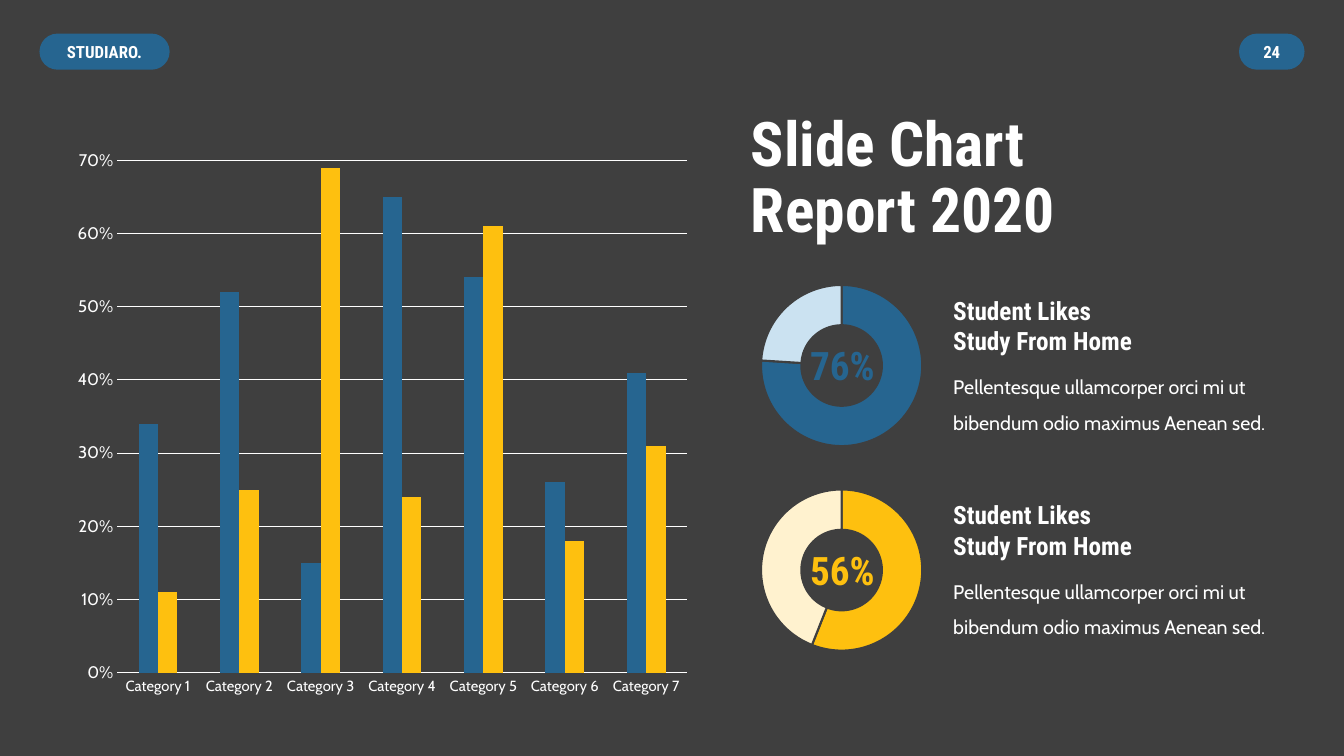
from dataclasses import dataclass

import pptx
import pptx.chart.data
import pptx.dml.color
import pptx.enum.chart
import pptx.enum.shapes
import pptx.enum.text
import pptx.oxml
import pptx.util

SLIDE_WIDTH, SLIDE_HEIGHT = 13.33, 7.5
COLUMNS, ROWS = 32, 18
DARK, WHITE, BLUE, YELLOW = "3F3F3F", "FFFFFF", "266590", "FEC00F"
HEADING_FONT, BODY_FONT = "Roboto Condensed", "Cabin"
ALIGN = pptx.enum.text.PP_ALIGN
ANCHOR = pptx.enum.text.MSO_ANCHOR
CHART_KIND = pptx.enum.chart.XL_CHART_TYPE
SURVEY_STEP = 4.87


@dataclass
class Box:
    column: float
    row: float
    width: float
    height: float

    def down(self, rows: float) -> "Box":
        return Box(self.column, self.row + rows, self.width, self.height)

    def place(self) -> tuple:
        across, down = SLIDE_WIDTH / COLUMNS, SLIDE_HEIGHT / ROWS
        return tuple(
            pptx.util.Inches(length)
            for length in (self.column * across, self.row * down,
                           self.width * across, self.height * down)
        )


@dataclass
class Badge:
    text: str
    box: Box


@dataclass
class Survey:
    percent: int
    color: str
    tint: str
    heading: str
    description: str


BADGES = [
    Badge("STUDIARO.", Box(0.94, 0.8, 3.1, 0.86)),
    Badge("24", Box(29.5, 0.8, 1.56, 0.86)),
]
HEADING = "Student Likes\nStudy From Home"
DESCRIPTION = "Pellentesque ullamcorper orci mi ut bibendum odio maximus Aenean sed."
SURVEYS = [
    Survey(76, BLUE, "CBE2F1", HEADING, DESCRIPTION),
    Survey(56, YELLOW, "FFF2CF", HEADING, DESCRIPTION),
]
CATEGORIES = [f"Category {number}" for number in range(1, 8)]
RESULTS = {
    "Series 1": ([0.34, 0.52, 0.15, 0.65, 0.54, 0.26, 0.41], BLUE),
    "Series 2": ([0.11, 0.25, 0.69, 0.24, 0.61, 0.18, 0.31], YELLOW),
}


def paint(target, color: str) -> None:
    target.solid()
    target.fore_color.rgb = pptx.dml.color.RGBColor.from_string(color)


def style_font(font, size: float, name: str, color: str, bold: bool = False) -> None:
    font.size, font.name, font.bold = pptx.util.Pt(size), name, bold
    paint(font.fill, color)


def style_line(line, color: str, width: float) -> None:
    paint(line.fill, color)
    line.width = pptx.util.Pt(width)


def write(frame, text: str, *, size: float, font: str = HEADING_FONT,
          color: str = WHITE, bold: bool = True, align=ALIGN.LEFT,
          anchor=ANCHOR.TOP, spacing: float = 1.0, wrap: bool = True) -> None:
    frame.text = text
    frame.word_wrap = wrap
    frame.auto_size = pptx.enum.text.MSO_AUTO_SIZE.NONE
    frame.vertical_anchor = anchor
    for paragraph in frame.paragraphs:
        paragraph.alignment = align
        paragraph.line_spacing = spacing
        for run in paragraph.runs:
            style_font(run.font, size, font, color, bold)


def add_text(slide, box: Box, text: str, **style) -> None:
    write(slide.shapes.add_textbox(*box.place()).text_frame, text, **style)


def add_badge(slide, badge: Badge) -> None:
    pill = slide.shapes.add_shape(
        pptx.enum.shapes.MSO_SHAPE.ROUNDED_RECTANGLE, *badge.box.place())
    pill.adjustments[0] = 0.5
    pill.shadow.inherit = False
    paint(pill.fill, BLUE)
    pill.line.fill.background()
    write(pill.text_frame, badge.text, size=12, align=ALIGN.CENTER, anchor=ANCHOR.MIDDLE)


def add_chart(slide, kind, box: Box, categories: list, results: dict):
    data = pptx.chart.data.CategoryChartData()
    data.categories = categories
    for name, values in results.items():
        data.add_series(name, values)
    chart = slide.shapes.add_chart(kind, *box.place(), data).chart
    chart.has_legend = chart.has_title = False
    style_font(chart.font, 10, BODY_FONT, WHITE)
    return chart


def fix_plot(chart, left: float, top: float, width: float, height: float) -> None:
    area = chart._chartSpace.chart.plotArea
    for layout in area.xpath("c:layout"):
        area.remove(layout)
    sizes = "".join(f'<c:{tag} val="{share}"/>' for tag, share in
                    zip("xywh", (left, top, width, height)))
    area.insert(0, pptx.oxml.parse_xml(
        '<c:layout xmlns:c="http://schemas.openxmlformats.org/drawingml/2006/chart">'
        '<c:manualLayout><c:layoutTarget val="inner"/>'
        f'<c:xMode val="edge"/><c:yMode val="edge"/>{sizes}'
        '</c:manualLayout></c:layout>'))


def add_results(slide) -> None:
    chart = add_chart(slide, CHART_KIND.COLUMN_CLUSTERED, Box(1.85, 2.18, 14.52, 14.42),
                      CATEGORIES, {name: values for name, (values, _) in RESULTS.items()})
    fix_plot(chart, 0.065, 0.053, 0.934, 0.907)
    plot = chart.plots[0]
    plot.gap_width, plot.overlap, plot.vary_by_categories = 219, 0, False
    for series, (_, color) in zip(plot.series, RESULTS.values()):
        paint(series.format.fill, color)
    for axis, size in ((chart.category_axis, 10.5), (chart.value_axis, 12)):
        axis.major_tick_mark = axis.minor_tick_mark = pptx.enum.chart.XL_TICK_MARK.NONE
        style_font(axis.tick_labels.font, size, BODY_FONT, WHITE)
    style_line(chart.category_axis.format.line, WHITE, 0.75)
    percent = chart.value_axis
    percent.minimum_scale, percent.maximum_scale, percent.major_unit = 0, 0.75, 0.1
    percent.format.line.fill.background()
    style_line(percent.major_gridlines.format.line, WHITE, 0.75)
    percent.tick_labels.number_format = "0%"
    percent.tick_labels.number_format_is_linked = False


def add_survey(slide, survey: Survey, offset: float) -> None:
    chart = add_chart(slide, CHART_KIND.DOUGHNUT, Box(17.64, 6.46, 4.8, 4.49).down(offset),
                      ["1", "2"], {"Series 1": [survey.percent, 100 - survey.percent]})
    fix_plot(chart, 0.1, 0.07, 0.8, 0.86)
    plot = chart.plots[0]
    plot._element.xpath("c:holeSize")[0].set("val", "75")
    for index, color in enumerate((survey.color, survey.tint)):
        part = plot.series[0].points[index].format
        paint(part.fill, color)
        style_line(part.line, DARK, 1.5)
    add_text(slide, Box(18.53, 8.02, 3.05, 1.37).down(offset), f"{survey.percent}%",
             size=28, color=survey.color, align=ALIGN.CENTER)
    add_text(slide, Box(22.46, 6.91, 4.8, 1.7).down(offset), survey.heading,
             size=18, wrap=False)
    add_text(slide, Box(22.46, 8.54, 8.35, 1.85).down(offset), survey.description,
             size=14, font=BODY_FONT, bold=False, spacing=1.5)


def main() -> None:
    deck = pptx.Presentation()
    deck.slide_width = pptx.util.Inches(SLIDE_WIDTH)
    deck.slide_height = pptx.util.Inches(SLIDE_HEIGHT)
    slide = deck.slides.add_slide(deck.slide_layouts[5])
    paint(slide.background.fill, DARK)
    for badge in BADGES:
        add_badge(slide, badge)
    heading = slide.shapes.title
    heading.left, heading.top, heading.width, heading.height = Box(
        17.64, 1.75, 13, 5.06).place()
    write(heading.text_frame, "Slide Chart\vReport 2020", size=44,
          anchor=ANCHOR.MIDDLE, spacing=0.9)
    add_results(slide)
    for index, survey in enumerate(SURVEYS):
        add_survey(slide, survey, index * SURVEY_STEP)
    deck.save("out.pptx")


if __name__ == "__main__":
    main()
